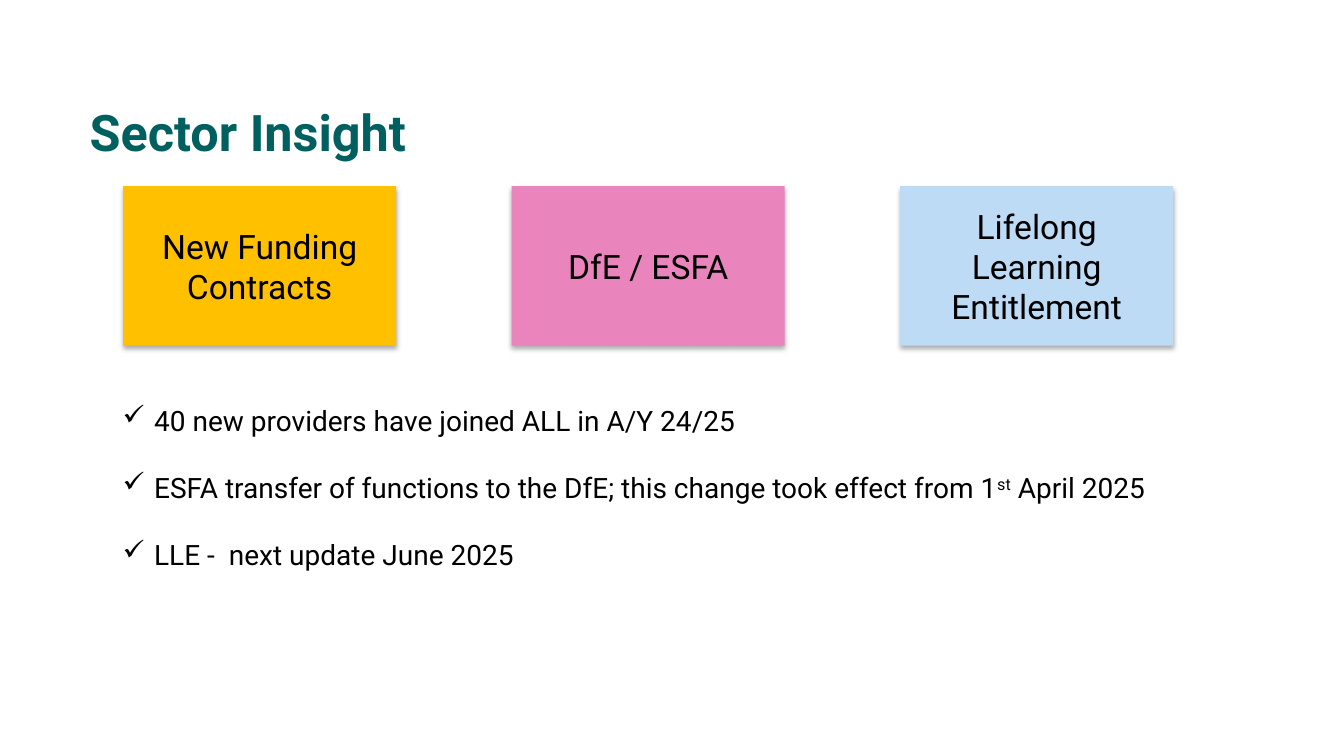
import pptx
import pptx.dml.color
import pptx.enum.shapes
import pptx.enum.text
import pptx.oxml
import pptx.oxml.ns
import pptx.util

Pt = pptx.util.Pt
ANCHOR = pptx.enum.text.MSO_ANCHOR
NAMESPACE = pptx.oxml.ns.nsdecls("a")
SHADOW = (
    f'<a:effectLst {NAMESPACE}><a:outerShdw blurRad="{Pt(3.5)}" dist="{Pt(2.2)}" '
    'dir="5400000" algn="t" rotWithShape="0"><a:srgbClr val="000000">'
    '<a:alpha val="32000"/></a:srgbClr></a:outerShdw></a:effectLst>'
)


def color(value):
    return pptx.dml.color.RGBColor.from_string(value)


class SlideBuilder:
    font_name = "Roboto"
    title_color = "006060"
    text_color = "000000"

    def __init__(self, page):
        self.page = page

    def add_span(self, para, text, size, fill=None, bold=False, superscript=False):
        span = para.add_run()
        span.text = text
        span.font.name = self.font_name
        span.font.size = Pt(size)
        span.font.bold = bold
        span.font.color.rgb = color(fill or self.text_color)
        if superscript:
            span._r.get_or_add_rPr().set("baseline", "30000")

    def add_text_frame(self, left, top, width, height):
        box = self.page.shapes.add_textbox(Pt(left), Pt(top), Pt(width), Pt(height))
        box.text_frame.word_wrap = True
        box.text_frame.vertical_anchor = ANCHOR.TOP
        return box.text_frame

    def add_title(self, text, left, top, width, height):
        para = self.add_text_frame(left, top, width, height).paragraphs[0]
        para.line_spacing = 0.9
        self.add_span(para, text, 36, self.title_color, bold=True)

    def add_card(self, text, fill, left, top, width, height):
        card = self.page.shapes.add_shape(
            pptx.enum.shapes.MSO_SHAPE.RECTANGLE,
            Pt(left), Pt(top), Pt(width), Pt(height),
        )
        card.fill.solid()
        card.fill.fore_color.rgb = color(fill)
        card.line.fill.background()
        card._element.spPr.append(pptx.oxml.parse_xml(SHADOW))
        card.text_frame.word_wrap = True
        card.text_frame.vertical_anchor = ANCHOR.MIDDLE
        para = card.text_frame.paragraphs[0]
        para.alignment = pptx.enum.text.PP_ALIGN.CENTER
        self.add_span(para, text, 24)

    def add_checklist(self, items, left, top, width, height):
        """Each item is a list of (text, superscript) pairs."""
        frame = self.add_text_frame(left, top, width, height)
        for index, item in enumerate(items):
            para = frame.add_paragraph() if index else frame.paragraphs[0]
            properties = para._p.get_or_add_pPr()
            properties.set("marL", str(Pt(22.5)))
            properties.set("indent", str(Pt(-22.5)))
            properties.append(pptx.oxml.parse_xml(f'<a:buChar {NAMESPACE} char="✓"/>'))
            if index:
                para.space_before = Pt(24)
            for text, superscript in item:
                self.add_span(para, text, 20, superscript=superscript)


def main():
    deck = pptx.Presentation()
    deck.slide_width, deck.slide_height = Pt(960), Pt(540)
    builder = SlideBuilder(deck.slides.add_slide(deck.slide_layouts[6]))

    builder.add_title("Sector Insight", 57, 73.5, 828, 36)
    cards = [
        ("New Funding Contracts", "FFC000"),
        ("DfE / ESFA", "EA84BC"),
        ("Lifelong Learning Entitlement", "BDDBF4"),
    ]
    for column, (text, fill) in enumerate(cards):
        builder.add_card(text, fill, 88 + column * 277.5, 133, 195, 114)

    builder.add_checklist(
        [
            [("40 new providers have joined ALL in A/Y 24/25", False)],
            [
                ("ESFA transfer of functions to the DfE; this change took effect from 1", False),
                ("st", True),
                (" April 2025", False),
            ],
            [("LLE -  next update June 2025", False)],
        ],
        80.5, 284.5, 828, 128,
    )
    deck.save("out.pptx")


if __name__ == "__main__":
    main()
